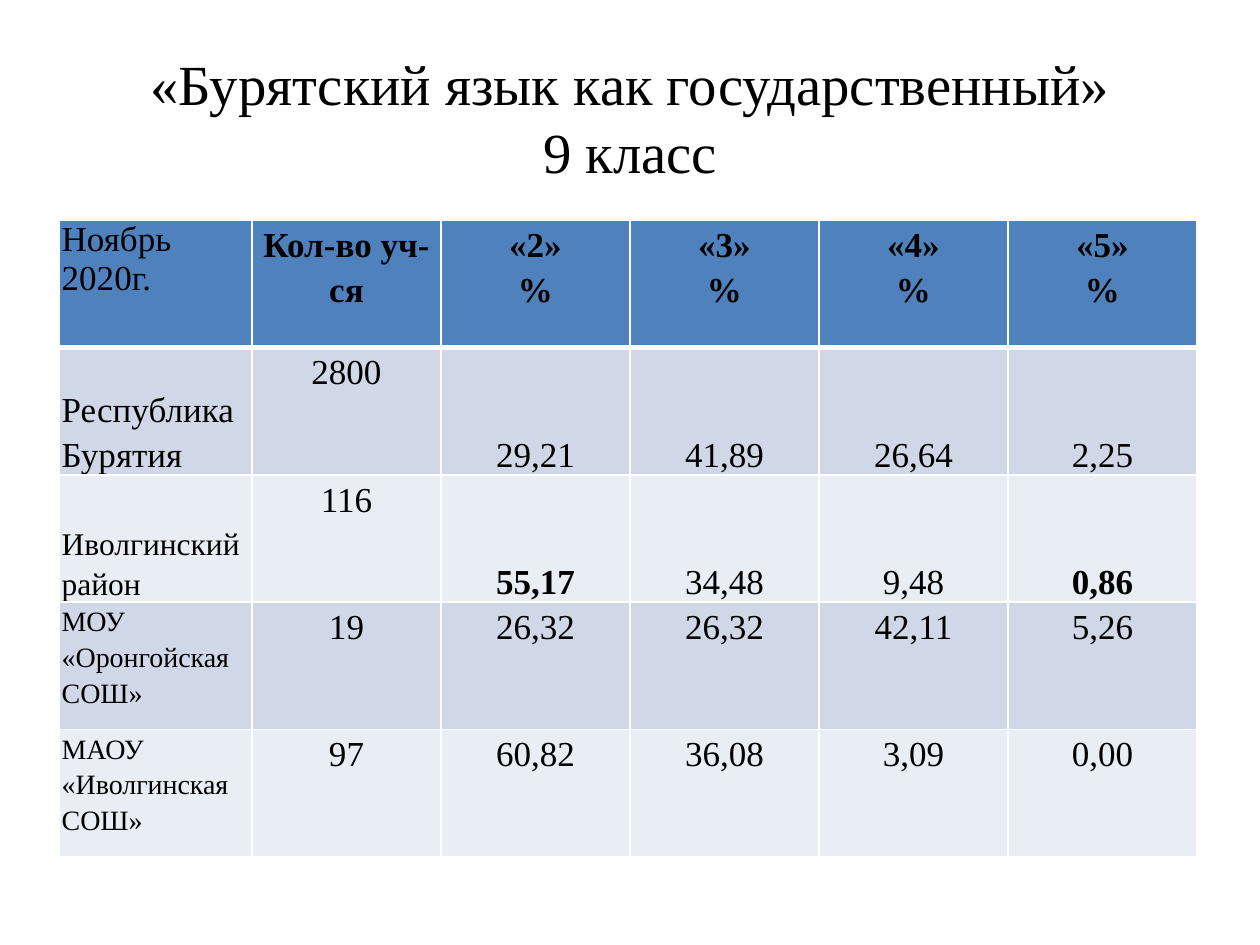
from dataclasses import dataclass

from lxml.etree import SubElement
from pptx import Presentation
from pptx.dml.color import RGBColor
from pptx.enum.text import MSO_ANCHOR, PP_ALIGN
from pptx.oxml.ns import qn
from pptx.util import Inches, Pt


@dataclass(frozen=True)
class Theme:
    font: str = "Times New Roman"
    ink: str = "000000"
    header: str = "4F81BD"
    bands: tuple = ("D0D8E8", "E9EDF4")
    border: str = "FFFFFF"
    thin: float = 1
    thick: float = 3
    title_size: float = 32.4
    cell_size: float = 20
    district_size: float = 18
    school_size: float = 16
    leading: float = 1.15


THEME = Theme()
TITLE = "«Бурятский язык как государственный»\v9 класс"
HEADINGS = ["Ноябрь 2020г.", "Кол-во уч-ся"] + [f"«{grade}»\n%" for grade in range(2, 6)]
RESULTS = [
    ["Республика Бурятия", "2800", "29,21", "41,89", "26,64", "2,25"],
    ["Иволгинский район", "116", "55,17", "34,48", "9,48", "0,86"],
    ["МОУ «Оронгойская СОШ»", "19", "26,32", "26,32", "42,11", "5,26"],
    ["МАОУ «Иволгинская СОШ»", "97", "60,82", "36,08", "3,09", "0,00"],
]
NAME_SIZES = [THEME.cell_size, THEME.district_size, THEME.school_size, THEME.school_size]
REGIONAL_ROWS = (1, 2)
EMPHASIZED = {(2, 2), (2, 5)}


def apply(target, values):
    for name, value in values.items():
        setattr(target, name, value)


def write(frame, text, size, bold=False, align=PP_ALIGN.CENTER, leading=None):
    frame.text = text
    for paragraph in frame.paragraphs:
        apply(paragraph, {"alignment": align, "line_spacing": leading})
        for run in paragraph.runs:
            apply(run.font, {"name": THEME.font, "size": Pt(size), "bold": bold})
            run.font.color.rgb = RGBColor.from_string(THEME.ink)


def draw_border(cell, side, width):
    line = SubElement(cell._tc.get_or_add_tcPr(), qn(f"a:ln{side}"), w=str(Pt(width)))
    fill = SubElement(line, qn("a:solidFill"))
    SubElement(fill, qn("a:srgbClr"), val=THEME.border)


def place_title(slide, left, top, width, height):
    title = slide.shapes.title
    apply(title, {"left": left, "top": top, "width": width, "height": height})
    apply(title.text_frame, {"word_wrap": True, "vertical_anchor": MSO_ANCHOR.MIDDLE})
    write(title.text_frame, TITLE, THEME.title_size)


def format_cell(cell, row, column):
    is_header, is_name = row == 0, column == 0
    at_bottom = row in REGIONAL_ROWS and column != 1
    apply(cell, {
        "margin_left": Inches(0.02),
        "margin_right": Inches(0.02),
        "margin_top": 0,
        "margin_bottom": 0,
        "vertical_anchor": MSO_ANCHOR.BOTTOM if at_bottom else MSO_ANCHOR.TOP,
    })
    widths = {
        "L": THEME.thin,
        "R": THEME.thin,
        "T": THEME.thick if row == 1 else THEME.thin,
        "B": THEME.thick if is_header else THEME.thin,
    }
    for side, width in widths.items():
        draw_border(cell, side, width)
    cell.fill.solid()
    color = THEME.header if is_header else THEME.bands[(row - 1) % 2]
    cell.fill.fore_color.rgb = RGBColor.from_string(color)
    write(
        cell.text_frame,
        (HEADINGS if is_header else RESULTS[row - 1])[column],
        NAME_SIZES[row - 1] if is_name and not is_header else THEME.cell_size,
        bold=(is_header and not is_name) or (row, column) in EMPHASIZED,
        align=PP_ALIGN.LEFT if is_name else PP_ALIGN.CENTER,
        leading=1.0 if is_header and is_name else THEME.leading,
    )


def place_results(slide, left, top, width, height):
    row_count, column_count = len(RESULTS) + 1, len(HEADINGS)
    results = slide.shapes.add_table(row_count, column_count, left, top, width, height).table
    grade_width = Inches(1.5)
    for column in results.columns:
        column.width = grade_width
    results.columns[0].width = width - grade_width * (column_count - 1)
    for row in range(row_count):
        for column in range(column_count):
            format_cell(results.cell(row, column), row, column)


def main():
    deck = Presentation()
    apply(deck, {"slide_width": Inches(10), "slide_height": Inches(7.5)})
    slide = deck.slides.add_slide(deck.slide_layouts[5])
    place_title(slide, Inches(0.5), Inches(0.3), Inches(9), Inches(1.25))
    place_results(slide, Inches(0.47), Inches(1.75), Inches(9.03), Inches(5.05))
    deck.save("out.pptx")


if __name__ == "__main__":
    main()
